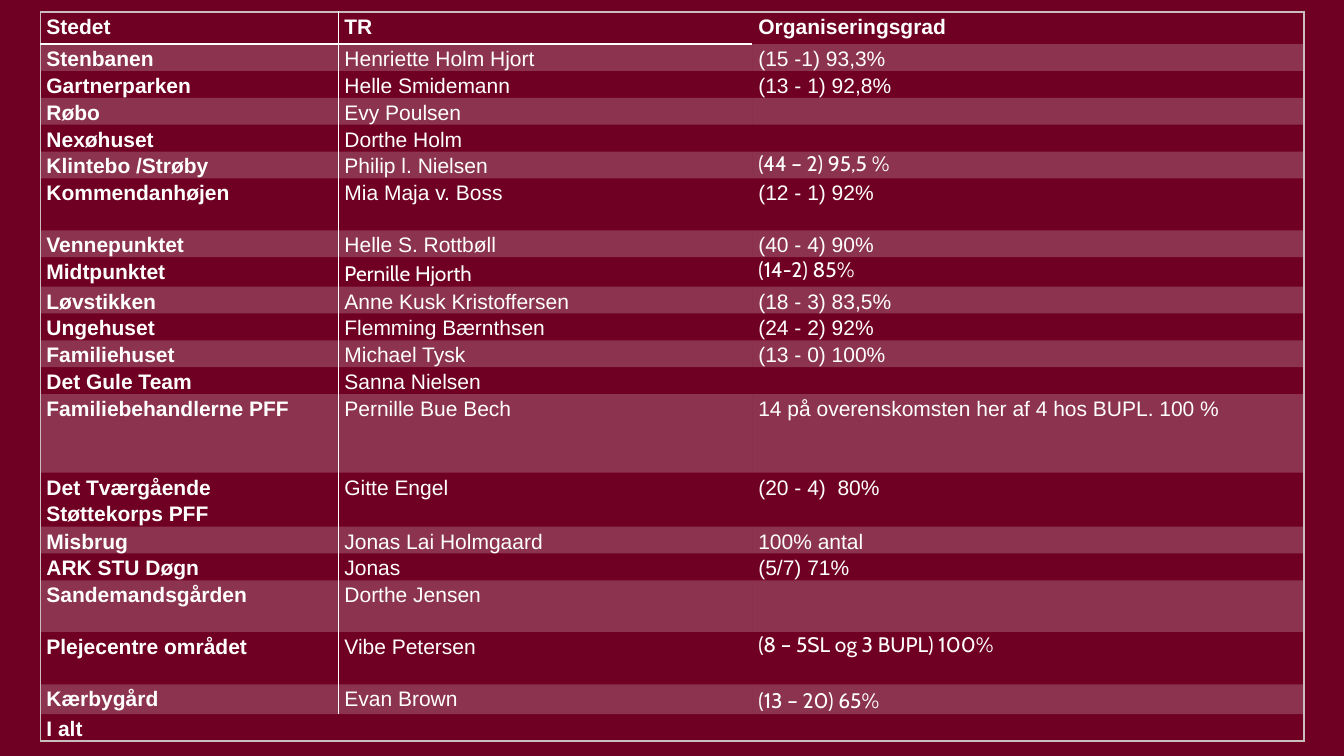
from dataclasses import dataclass

from lxml import etree
from pptx import Presentation
from pptx import util as u
from pptx.dml import color
from pptx.enum import text
from pptx.oxml import ns

PLACES = [
    ("Stedet", "TR", "Organiseringsgrad"),
    ("Stenbanen", "Henriette Holm Hjort", "(15 -1) 93,3%"),
    ("Gartnerparken", "Helle Smidemann", "(13 - 1) 92,8%"),
    ("Røbo", "Evy Poulsen", ""),
    ("Nexøhuset", "Dorthe Holm", ""),
    ("Klintebo /Strøby", "Philip l. Nielsen", "(44 – 2) 95,5 %"),
    ("Kommendanhøjen", "Mia Maja v. Boss", "(12 - 1) 92%"),
    ("Vennepunktet", "Helle S. Rottbøll", "(40 - 4) 90%"),
    ("Midtpunktet", "Pernille Hjorth", "(14-2) 85%"),
    ("Løvstikken", "Anne Kusk Kristoffersen", "(18 - 3) 83,5%"),
    ("Ungehuset", "Flemming Bærnthsen", "(24 - 2) 92%"),
    ("Familiehuset", "Michael Tysk", "(13 - 0) 100%"),
    ("Det Gule Team", "Sanna Nielsen", ""),
    ("Familiebehandlerne PFF", "Pernille Bue Bech",
     "14 på overenskomsten her af 4 hos BUPL. 100 %"),
    ("Det Tværgående Støttekorps PFF", "Gitte Engel", "(20 - 4)  80%"),
    ("Misbrug", "Jonas Lai Holmgaard", "100% antal"),
    ("ARK STU Døgn", "Jonas", "(5/7) 71%"),
    ("Sandemandsgården", "Dorthe Jensen", ""),
    ("Plejecentre området", "Vibe Petersen", "(8 – 5SL og 3 BUPL) 100%"),
    ("Kærbygård", "Evan Brown", "(13 – 20) 65%"),
    ("I alt", "", ""),
]
COLUMN_WIDTHS = (7.51, 10.43, 13.9)
ROW_HEIGHT = 0.67
SPECIAL_HEIGHTS = {0: 0.81, 6: 1.31, 8: 0.74, 13: 1.98, 14: 1.36,
                   17: 1.3, 18: 1.32, 19: 0.75}
CABIN_CELLS = {(5, 2), (8, 1), (8, 2), (18, 2), (19, 2)}
SINGLE_SPACED_CELLS = {(5, 2), (8, 2), (18, 2)}
PLAIN_TABLE_STYLE = "{2D5ABB26-0587-4C30-8999-92F81FD0307C}"


@dataclass(frozen=True)
class Theme:
    background: str = "700023"
    ink: str = "FFFFFF"
    frame: str = "C9BDBD"
    band_opacity: int = 20
    body_font: str = "Arial"
    accent_font: str = "Cabin"
    size: float = 15
    frame_width: float = 1
    divider_width: float = 1.5
    header_width: float = 2


class SlideBuilder:
    def __init__(self, page, theme):
        self.page = page
        self.theme = theme

    def paint_background(self):
        fill = self.page.background.fill
        fill.solid()
        fill.fore_color.rgb = color.RGBColor.from_string(self.theme.background)

    def add_table(self, rows, left, top):
        heights = [SPECIAL_HEIGHTS.get(i, ROW_HEIGHT) for i in range(len(rows))]
        frame = self.page.shapes.add_table(
            len(rows), len(COLUMN_WIDTHS), u.Cm(left), u.Cm(top),
            u.Cm(sum(COLUMN_WIDTHS)), u.Cm(sum(heights)))
        table = frame.table
        table.horz_banding = False
        table._tbl.tblPr.find(ns.qn("a:tableStyleId")).text = PLAIN_TABLE_STYLE
        for column, width in zip(table.columns, COLUMN_WIDTHS):
            column.width = u.Cm(width)
        for row, height in zip(table.rows, heights):
            row.height = u.Cm(height)
        for i, values in enumerate(rows):
            for j, value in enumerate(values):
                cell = table.cell(i, j)
                self.write_cell(cell, value, i, j)
                self.draw_borders(cell, i, j, len(rows) - 1)
                if i % 2:
                    self.fill_band(cell)
                else:
                    cell.fill.background()

    def write_cell(self, cell, value, i, j):
        theme = self.theme
        cell.margin_left = cell.margin_right = u.Cm(0.15)
        cell.margin_top = cell.margin_bottom = 0
        cell.vertical_anchor = text.MSO_ANCHOR.TOP
        para = cell.text_frame.paragraphs[0]
        para.text = value
        if not value:
            end = etree.SubElement(para._p, ns.qn("a:endParaRPr"))
            end.set("sz", str(int(theme.size * 100)))
            return
        if (i, j) not in SINGLE_SPACED_CELLS:
            para.line_spacing = 1.15
            para.space_after = u.Pt(8)
        for span in para.runs:
            span.font.name = theme.accent_font if (i, j) in CABIN_CELLS else theme.body_font
            span.font.size = u.Pt(theme.size)
            span.font.bold = i == 0 or j == 0
            span.font.color.rgb = color.RGBColor.from_string(theme.ink)

    def draw_borders(self, cell, i, j, last_row):
        """Frame the table, underline the header and divide off the first column."""
        theme = self.theme
        frame = (theme.frame, theme.frame_width)
        divider = (theme.ink, theme.divider_width)
        last_column = len(COLUMN_WIDTHS) - 1
        edges = {}
        if j == 0:
            edges["L"] = frame
            if i < last_row:
                edges["R"] = divider
        if j == last_column:
            edges["R"] = frame
        if i == 0:
            edges["T"] = frame
            if j < last_column:
                edges["B"] = (theme.ink, theme.header_width)
        if i == last_row:
            edges["B"] = frame
        properties = cell._tc.get_or_add_tcPr()
        for side, (shade, width) in edges.items():
            line = etree.SubElement(properties, ns.qn(f"a:ln{side}"), w=str(u.Pt(width)))
            solid = etree.SubElement(line, ns.qn("a:solidFill"))
            etree.SubElement(solid, ns.qn("a:srgbClr"), val=shade)

    def fill_band(self, cell):
        cell.fill.solid()
        cell.fill.fore_color.rgb = color.RGBColor.from_string(self.theme.ink)
        shade = cell._tc.tcPr.find(ns.qn("a:solidFill")).find(ns.qn("a:srgbClr"))
        etree.SubElement(shade, ns.qn("a:alpha"), val=str(self.theme.band_opacity * 1000))


def main():
    deck = Presentation()
    deck.slide_width, deck.slide_height = u.Cm(33.87), u.Cm(19.05)
    page = deck.slides.add_slide(deck.slide_layouts[6])
    builder = SlideBuilder(page, Theme())
    builder.paint_background()
    builder.add_table(PLACES, 1.02, 0.3)
    deck.save("out.pptx")


if __name__ == "__main__":
    main()
